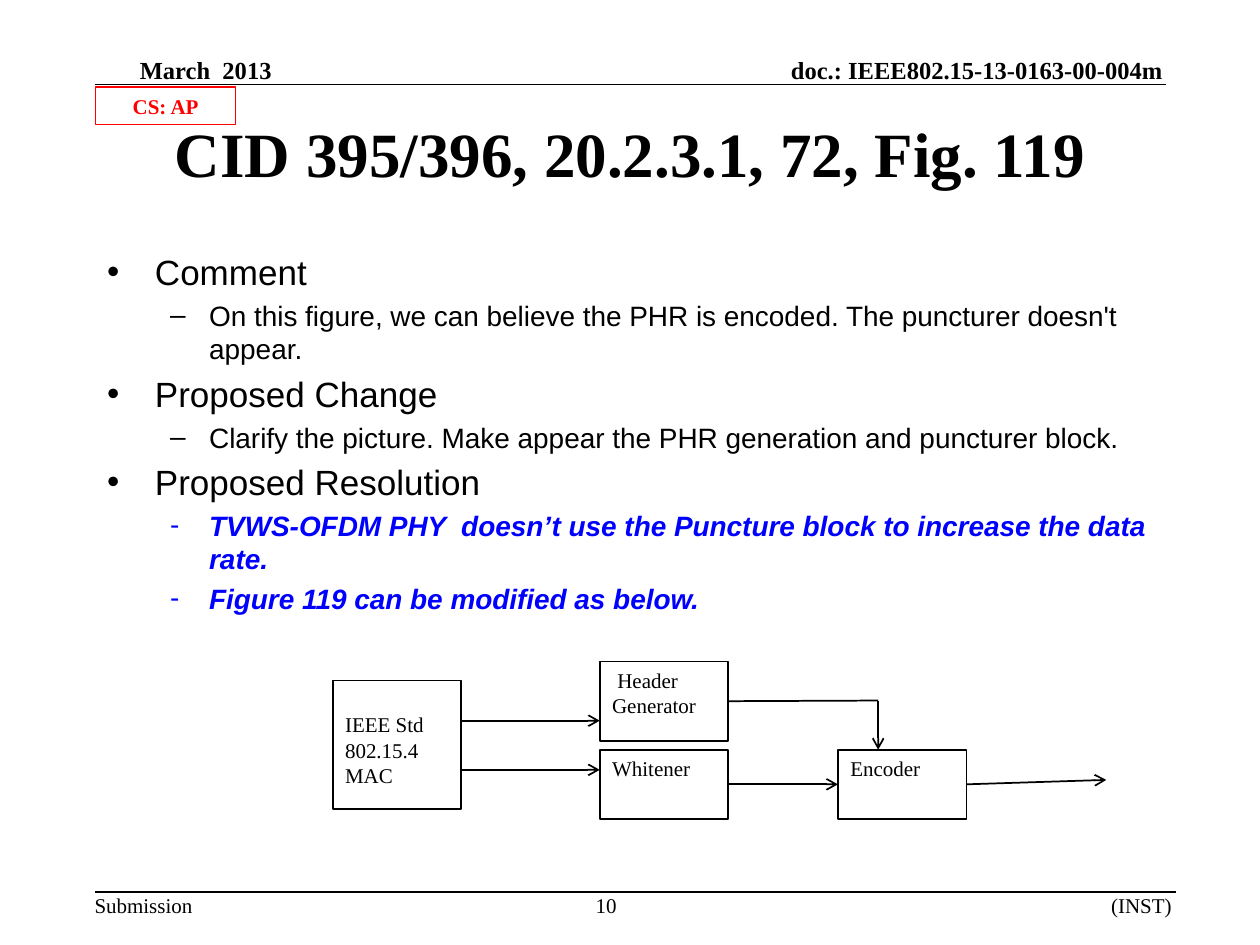
from lxml.etree import SubElement as Sub
from pptx import Presentation
from pptx.dml.color import RGBColor as Rgb
from pptx.enum.shapes import MSO_CONNECTOR as Conn, MSO_SHAPE as Kind
from pptx.enum.text import MSO_ANCHOR as Anchor, PP_ALIGN as Align
from pptx.oxml.ns import qn
from pptx.util import Inches, Pt

INK = {"black": "000000", "white": "FFFFFF", "red": "FF0000", "blue": "0000FF"}
SERIF, SANS = "Times New Roman", "Arial"
LEFT = 0.75
ITEMS = [
    ("•", "Comment"),
    ("–", "On this figure, we can believe the PHR is encoded. The puncturer doesn't appear."),
    ("•", "Proposed Change"),
    ("–", "Clarify the picture. Make appear the PHR generation and puncturer block."),
    ("•", "Proposed Resolution"),
    ("-", "TVWS-OFDM PHY  doesn’t use the Puncture block to increase the data rate."),
    ("-", "Figure 119 can be modified as below."),
]


def tint(name):
    return Rgb.from_string(INK[name])


def place(shape, left, top, width, height):
    shape.left, shape.top = Inches(left), Inches(top)
    shape.width, shape.height = Inches(width), Inches(height)


def write(para, text, size, face=SERIF, ink="black", bold=False, slant=False):
    run = para.add_run()
    run.text = text
    font = run.font
    font.name, font.size = face, Pt(size)
    font.bold, font.italic = bold, slant
    font.color.rgb = tint(ink)


def add_strip(slide, top, width, height, parts, tabs, size, inset=0, bold=False):
    box = slide.shapes.add_textbox(Inches(LEFT), Inches(top), Inches(width), Inches(height))
    frame = box.text_frame
    frame.word_wrap = True
    frame.margin_top = frame.margin_right = frame.margin_bottom = 0
    frame.margin_left = Inches(inset)
    para = frame.paragraphs[0]
    stops = Sub(para._p.get_or_add_pPr(), qn("a:tabLst"))
    for pos, side in tabs:
        Sub(stops, qn("a:tab"), pos=str(Inches(pos)), algn=side)
    for num, part in enumerate(parts):
        write(para, "\t" + part if num else part, size, bold=bold)
    return frame


def add_title(slide):
    title = slide.shapes.title
    place(title, LEFT, 0.84, 8.5, 0.94)
    title.text_frame.vertical_anchor = Anchor.MIDDLE
    para = title.text_frame.paragraphs[0]
    para.alignment = Align.CENTER
    para.line_spacing = Pt(29)
    write(para, "CID 395/396, 20.2.3.1, 72, Fig. 119", 36, bold=True)


def add_list(slide):
    body = slide.placeholders[1]
    place(body, LEFT, 1.94, 8.5, 4.73)
    frame = body.text_frame
    for num, (mark, text) in enumerate(ITEMS):
        para = frame.add_paragraph() if num else frame.paragraphs[0]
        head, blue = mark == "•", mark == "-"
        size = 20 if head else 16
        para.level = 0 if head else 1
        props = para._p.get_or_add_pPr()
        props.set("marL", str(Inches(0.38 if head else 0.81)))
        props.set("indent", str(Inches(-0.38 if head else -0.31)))
        Sub(props, qn("a:buChar"), char=mark)
        para.space_before = Pt(0.2 * size if num else 0)
        write(para, text, size, SANS, "blue" if blue else "black", blue, blue)


def add_box(slide, area, lines, ink="black", weight=1, inset=0.05):
    box = slide.shapes.add_shape(Kind.RECTANGLE, *map(Inches, area))
    box.shadow.inherit = False
    box.fill.solid()
    box.fill.fore_color.rgb = tint("white")
    box.line.color.rgb = tint(ink)
    box.line.width = Pt(weight)
    frame = box.text_frame
    frame.vertical_anchor = Anchor.TOP
    frame.margin_top = Inches(inset)
    for num, text in enumerate(lines):
        para = frame.add_paragraph() if num else frame.paragraphs[0]
        para.alignment = Align.LEFT
        write(para, text, 12, ink=ink)
    return box


def add_tag(slide):
    tag = add_box(slide, (0.76, 0.69, 1.11, 0.3), ["CS: AP"], "red", 0.75)
    tag.text_frame.vertical_anchor = Anchor.MIDDLE
    para = tag.text_frame.paragraphs[0]
    para.alignment = Align.CENTER
    para.runs[0].font.bold = True


def add_line(slide, start, end, arrow=True, tail=None, tip=None):
    line = slide.shapes.add_connector(Conn.STRAIGHT, *map(Inches, start + end))
    if tail:
        line.begin_connect(tail, 3)
    if tip:
        line.end_connect(tip, 1)
    line.line.color.rgb = tint("black")
    line.line.width = Pt(1)
    if arrow:
        Sub(line.line._get_or_add_ln(), qn("a:tailEnd"), type="arrow")
    Sub(line._element.spPr, qn("a:effectLst"))


def add_flow(slide):
    add_box(slide, (2.64, 5.4, 1.02, 1.02), ["IEEE Std", "802.15.4", "MAC"], inset=0.25)
    header = add_box(slide, (4.76, 5.25, 1.02, 0.63), [" Header", "Generator"])
    white = add_box(slide, (4.76, 5.95, 1.02, 0.55), ["Whitener"])
    coder = add_box(slide, (6.65, 5.95, 1.02, 0.55), ["Encoder"])
    for y in (5.72, 6.11):
        add_line(slide, (3.66, y), (4.76, y))
    add_line(slide, (5.78, 6.23), (6.65, 6.23), tail=white, tip=coder)
    add_line(slide, (6.97, 5.56), (6.97, 5.95))
    add_line(slide, (5.78, 5.56), (6.97, 5.56), arrow=False, tail=header)
    add_line(slide, (7.67, 6.23), (8.78, 6.19), tail=coder)


def main():
    deck = Presentation()
    deck.slide_width, deck.slide_height = Inches(10), Inches(7.5)
    slide = deck.slides.add_slide(deck.slide_layouts[1])
    top = add_strip(slide, 0.43, 8.5, 0.24,
                    ["March  2013", "doc.: IEEE802.15-13-0163-00-004m"],
                    [(8.12, "r")], 14, inset=0.36, bold=True)
    top.vertical_anchor = Anchor.BOTTOM
    add_line(slide, (LEFT, 0.67), (9.25, 0.67), arrow=False)
    add_strip(slide, 7.08, 8.58, 0.2, ["Submission", "10", "(INST)"],
              [(4.06, "ctr"), (8.55, "r")], 12)
    add_line(slide, (LEFT, 7.08), (9.33, 7.08), arrow=False)
    add_title(slide)
    add_list(slide)
    add_tag(slide)
    add_flow(slide)
    deck.save("out.pptx")


if __name__ == "__main__":
    main()
